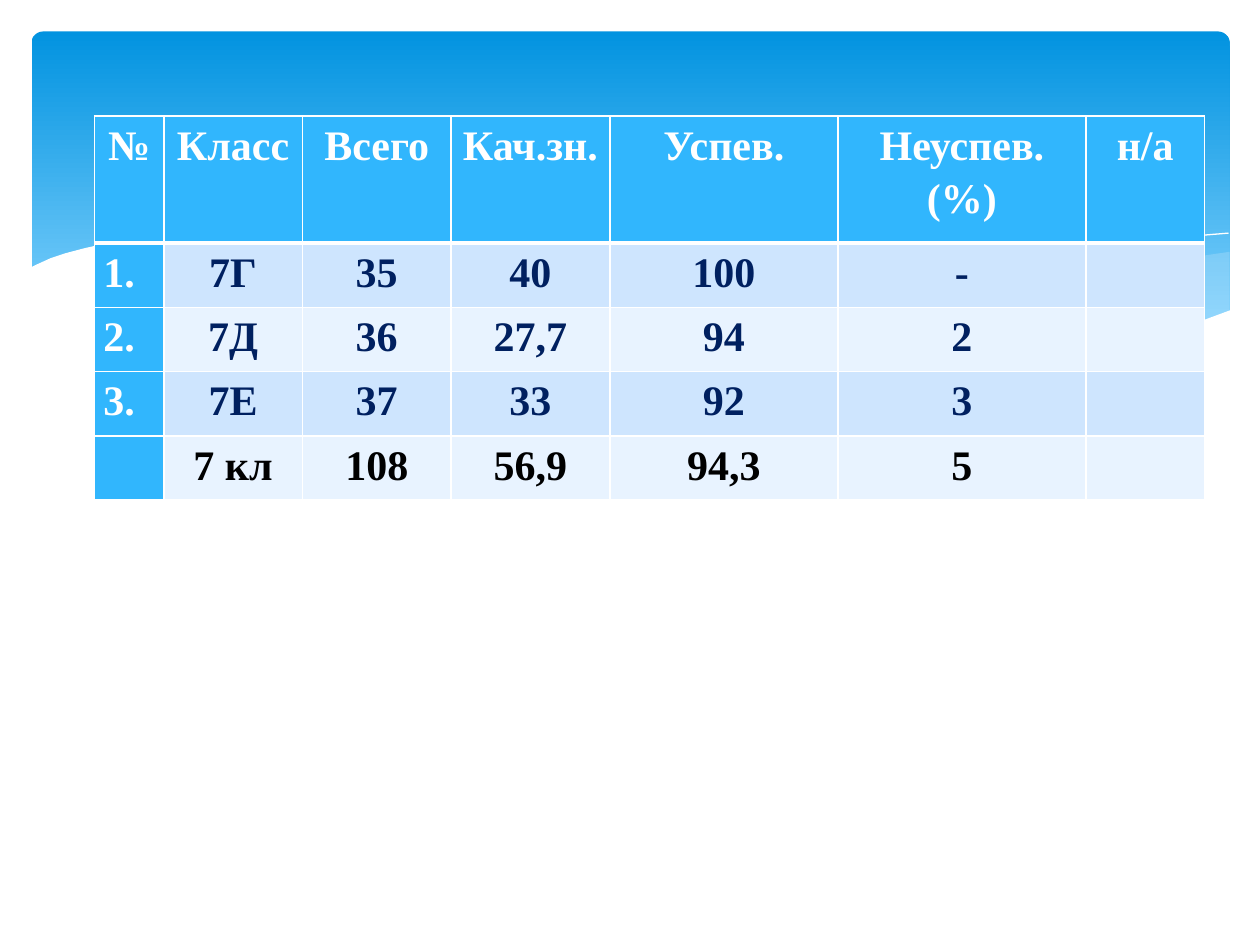
from dataclasses import dataclass

from lxml.etree import SubElement
from pptx import Presentation
from pptx.dml.color import RGBColor
from pptx.enum.shapes import MSO_SHAPE as Shape
from pptx.enum.text import PP_ALIGN as Align
from pptx.oxml.ns import qn
from pptx.slide import Slide
from pptx.util import Inches, Pt

WHITE = RGBColor(0xFF, 0xFF, 0xFF)
BLACK = RGBColor(0, 0, 0)
NAVY = RGBColor(0x00, 0x20, 0x60)
SKY = RGBColor(0x31, 0xB6, 0xFD)
BAND_DARK = RGBColor(0xCE, 0xE5, 0xFE)
BAND_LIGHT = RGBColor(0xE8, 0xF3, 0xFF)
BANNER_TOP = RGBColor(0x02, 0x93, 0xE0)
BANNER_BOTTOM = RGBColor(0x83, 0xD3, 0xFE)
MIST = RGBColor(0xC6, 0xE7, 0xFC)

# Points are (column, row) on a grid of 100 columns and 75 rows.
RIGHT_WAVE = [
    (97.5, 20), (94.8, 20.4), (92.1, 21), (86.1, 22.3), (77.9, 24.2), (70.6, 25.7),
    (66.1, 26.5), (70.5, 27.1), (74.5, 27.5), (78.1, 27.7), (82.4, 27.7), (86.3, 27.5),
    (89.7, 27), (92.8, 26.3), (94.9, 25.7), (97.6, 24.7), (97.6, 20)]
MIDDLE_WAVE = [
    (89.3, 27.3), (83.7, 26.5), (77.5, 25.4), (70.6, 24), (62.9, 22.2), (56.9, 20.8),
    (51.4, 19.8), (46.5, 19.1), (42, 18.7), (38, 18.5), (34.4, 18.6), (28.6, 19.1),
    (34.2, 19.9), (40.4, 21.1), (49.1, 23.2), (56.6, 24.8), (63.4, 26.1), (69.5, 27),
    (74.8, 27.6), (79.6, 27.8), (84.8, 27.7), (89.3, 27.3)]
LONG_LINE = [
    (30.9, 19.5), (34.4, 19), (38.7, 18.7), (43.3, 18.7), (48.9, 19), (55.6, 19.7),
    (63.6, 20.8), (72.7, 22.6), (79.5, 24.1), (86.9, 26.1), (90.7, 27.2)]
SHORT_LINE = [
    (61.3, 25.7), (67.2, 24.1), (74.8, 22.3), (80.6, 21), (86.6, 19.9), (91, 19.2),
    (95.1, 18.7), (97.5, 18.5)]
WHITE_WAVE = [
    (97.7, 24.6), (95, 25.6), (92, 26.5), (88.7, 27.1), (85, 27.5), (80.9, 27.7),
    (76.1, 27.5), (70.8, 27), (64.8, 26.2), (57.9, 25), (50.3, 23.3), (41.8, 21.3),
    (36.5, 20.2), (31.6, 19.4), (27.1, 18.8), (23, 18.5), (19.3, 18.4), (16.1, 18.4),
    (13.2, 18.6), (10.6, 18.9), (8.5, 19.3), (6.7, 19.7), (5.2, 20.1), (4, 20.5),
    (2.9, 21), (2.3, 21.3), (2.3, 32.9), (97.7, 32.9)]

COLUMN_WIDTHS = [5.5, 11, 11.8, 12.6, 18.1, 19.7, 9.4]
ROW_HEIGHTS = [10.1, 5.1, 5.1, 5.1, 5.1]
RESULTS = [
    ["№", "Класс", "Всего", "Кач.зн.", "Успев.", "Неуспев.\n(%)", "н/а"],
    ["1.", "7Г", "35", "40", "100", "-", ""],
    ["2.", "7Д", "36", "27,7", "94", "2", ""],
    ["3.", "7Е", "37", "33", "92", "3", ""],
    ["", "7 кл", "108", "56,9", "94,3", "5", ""],
]


def write(frame, text, *, font, size, color, align):
    """Fill a text frame with bold text, one paragraph per line."""
    frame.text = text
    for para in frame.paragraphs:
        para.alignment = align
        para.line_spacing = 1.15
        for span in para.runs:
            span.font.name = font
            span.font.size = Pt(size)
            span.font.bold = True
            span.font.color.rgb = color


def add_borders(cell, color, bottom):
    properties = cell._tc.get_or_add_tcPr()
    for side, width in (("L", 1), ("R", 1), ("T", 1), ("B", bottom)):
        line = SubElement(properties, qn(f"a:ln{side}"), w=str(Pt(width)))
        fill = SubElement(line, qn("a:solidFill"))
        SubElement(fill, qn("a:srgbClr"), val=str(color))


@dataclass
class Painter:
    slide: Slide
    cell: int = Inches(0.1)
    font: str = "Times New Roman"
    size: int = 24

    def grid(self, *counts):
        return [round(count * self.cell) for count in counts]

    def banner(self, *place):
        shape = self.slide.shapes.add_shape(Shape.ROUNDED_RECTANGLE, *self.grid(*place))
        shape.adjustments[0] = 0.034
        shape.shadow.inherit = False
        shape.line.fill.background()
        shape.fill.gradient()
        shape.fill.gradient_angle = 270
        stops = ((0, BANNER_TOP), (0.9, BANNER_BOTTOM))
        for stop, (position, color) in zip(shape.fill.gradient_stops, stops):
            stop.position = position
            stop.color.rgb = color

    def outline(self, points, closed):
        start, *rest = [self.grid(*point) for point in points]
        builder = self.slide.shapes.build_freeform(*start)
        builder.add_line_segments(rest, close=closed)
        shape = builder.convert_to_shape()
        shape.shadow.inherit = False
        return shape

    def wave(self, points, color, opacity=100):
        shape = self.outline(points, closed=True)
        shape.line.fill.background()
        shape.fill.solid()
        shape.fill.fore_color.rgb = color
        if opacity < 100:
            tone = shape.fill._xPr.find(".//" + qn("a:srgbClr"))
            SubElement(tone, qn("a:alpha"), val=str(opacity * 1000))

    def curve(self, points, color):
        shape = self.outline(points, closed=False)
        shape.fill.background()
        shape.line.color.rgb = color
        shape.line.width = Pt(0)

    def table(self, left, top, widths, heights, rows):
        place = self.grid(left, top, sum(widths), sum(heights))
        table = self.slide.shapes.add_table(len(rows), len(widths), *place).table
        for column, width in zip(table.columns, self.grid(*widths)):
            column.width = width
        for row, height in zip(table.rows, self.grid(*heights)):
            row.height = height
        last = len(rows) - 1
        for r, texts in enumerate(rows):
            for c, text in enumerate(texts):
                heading = r == 0 or c == 0
                body_color = BLACK if r == last else NAVY
                band = BAND_DARK if r % 2 else BAND_LIGHT
                cell = table.cell(r, c)
                cell.margin_left = cell.margin_right = Inches(0.07)
                cell.margin_top = cell.margin_bottom = 0
                add_borders(cell, WHITE, bottom=1 if r else 3)
                cell.fill.solid()
                cell.fill.fore_color.rgb = SKY if heading else band
                write(cell.text_frame, text, font=self.font, size=self.size,
                      color=WHITE if heading else body_color,
                      align=Align.LEFT if r and c == 0 else Align.CENTER)


def main():
    deck = Presentation()
    deck.slide_width, deck.slide_height = Inches(10), Inches(7.5)
    painter = Painter(deck.slides.add_slide(deck.slide_layouts[6]))
    painter.banner(2.5, 2.5, 95.1, 27)
    painter.wave(RIGHT_WAVE, MIST, opacity=29)
    painter.wave(MIDDLE_WAVE, MIST, opacity=40)
    painter.curve(LONG_LINE, WHITE)
    painter.curve(SHORT_LINE, WHITE)
    painter.wave(WHITE_WAVE, WHITE)
    painter.table(7.5, 9.2, COLUMN_WIDTHS, ROW_HEIGHTS, RESULTS)
    deck.save("out.pptx")


if __name__ == "__main__":
    main()
